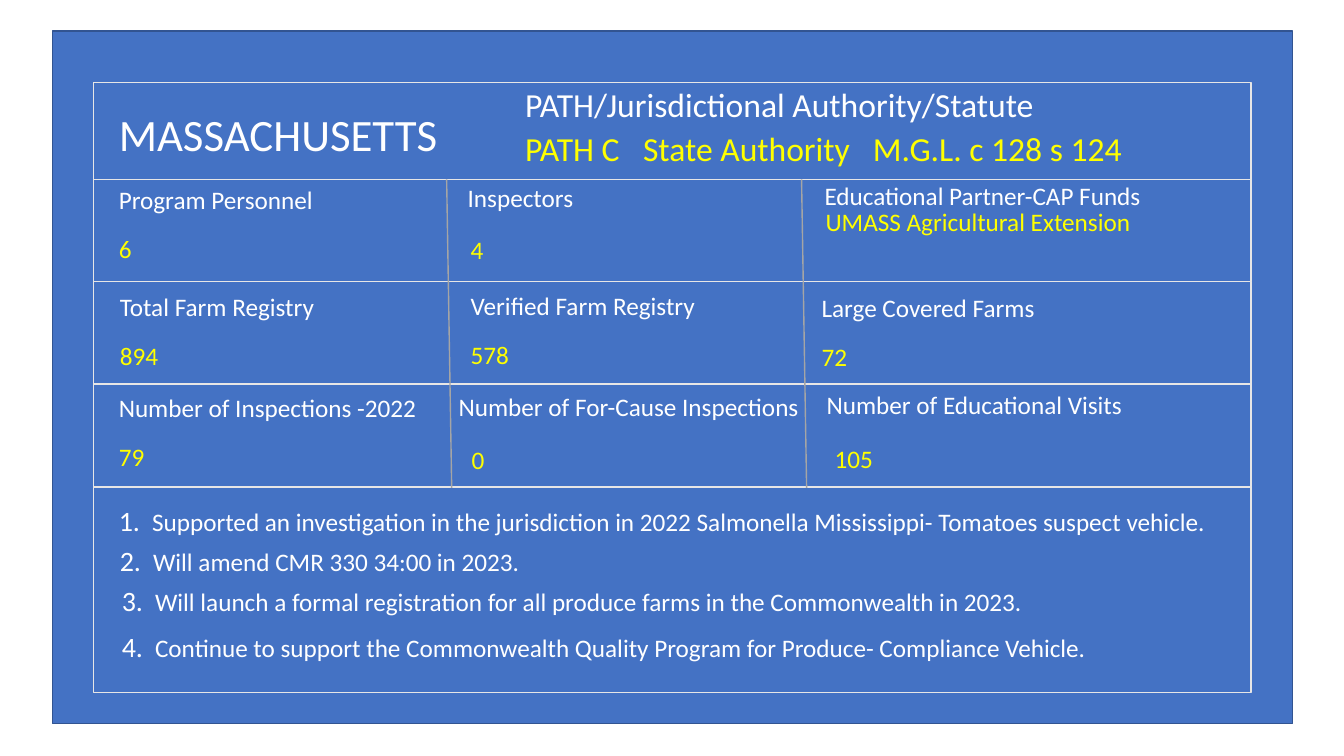
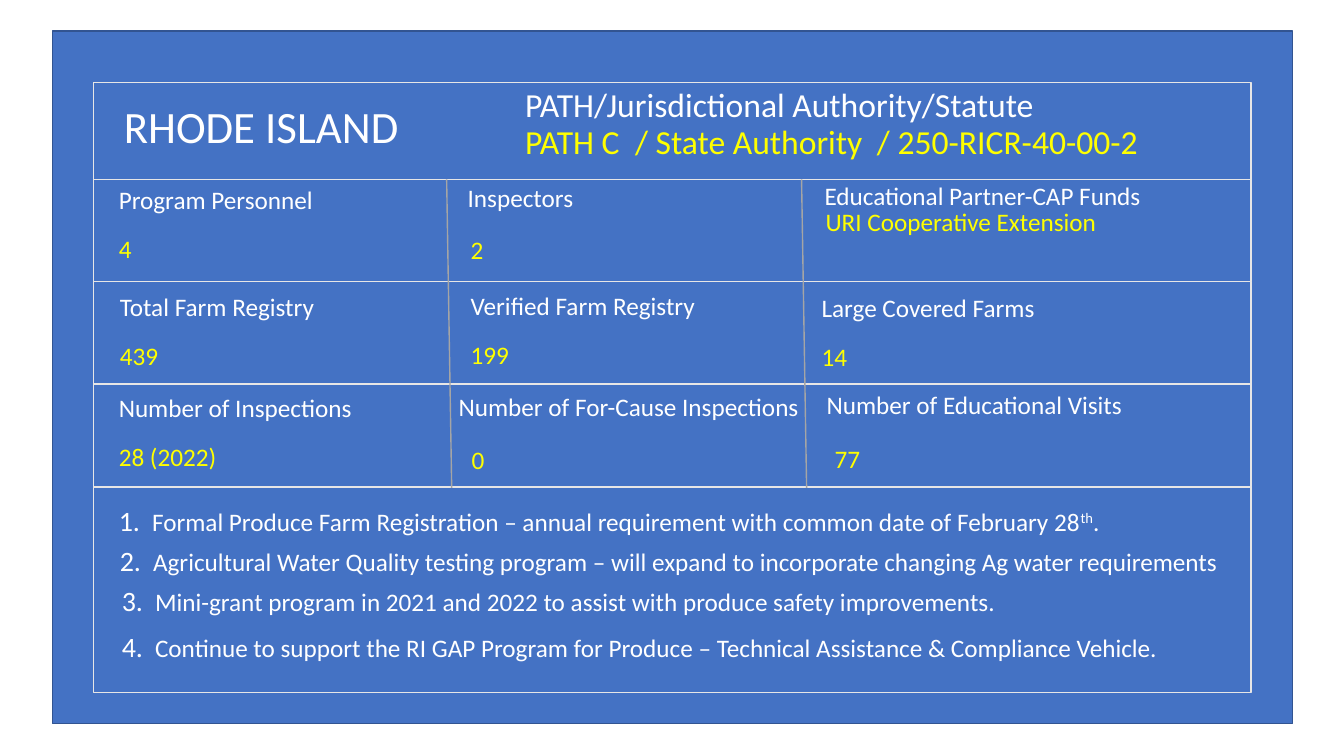
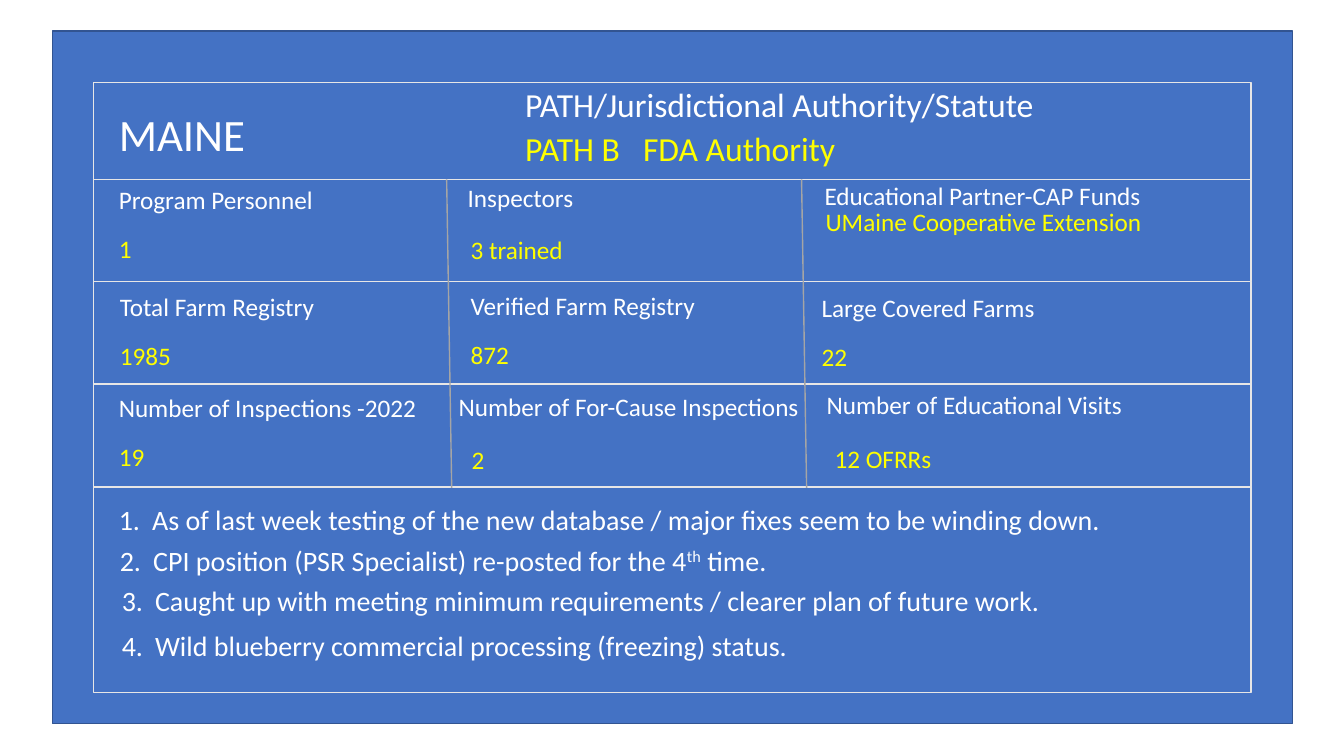
from pptx import Presentation
from pptx.dml.color import RGBColor
from pptx.enum.shapes import MSO_CONNECTOR, MSO_SHAPE
from pptx.enum.text import MSO_ANCHOR, MSO_AUTO_SIZE
from pptx.oxml.ns import qn
from pptx.util import Inches, Pt
from lxml.etree import SubElement

BLUE = RGBColor(0x44, 0x72, 0xC4)
NAVY = RGBColor(0x32, 0x54, 0x91)
PALE = RGBColor(0xE7, 0xE6, 0xE6)
GRAY = RGBColor(0xA5, 0xA5, 0xA5)
WHITE = RGBColor(0xFF, 0xFF, 0xFF)
YELLOW = RGBColor(0xFF, 0xFF, 0x00)
FONT = "Calibri"

PANEL = (0.52, 0.31, 12.3, 6.87)
BAND_LEFT, BAND_WIDTH = 0.93, 11.48
BANDS = [(0.82, 1.02), (1.78, 1.02), (2.79, 1.02), (3.81, 1.02), (4.83, 2.04)]
DIVIDERS = [(4.43, 4.48), (7.95, 8.0)]
DIVIDER_TOP, DIVIDER_BOTTOM = 1.78, 4.84
STATUTE_HEADING = "PATH/Jurisdictional Authority/Statute"
CELL_WIDTH, CELL_HEIGHT = 4.67, 0.42
NOTE_PLACES = [(1.08, 4.93), (1.09, 5.33), (1.11, 5.73), (1.11, 6.18)]
NOTE_INDENT, NUMBER_SIZE = 0.33, 20

CELLS = [
    ("Program Personnel", (1.08, 1.78), (1.08, 2.27)),
    ("Inspectors", (4.54, 1.76), (4.57, 2.28)),
    ("Educational Partner-CAP Funds", (8.08, 1.74), (8.09, 2.0)),
    ("Total Farm Registry", (1.09, 2.84), (1.09, 3.33)),
    ("Verified Farm Registry", (4.57, 2.83), (4.57, 3.32)),
    ("Large Covered Farms", (8.05, 2.85), (8.05, 3.34)),
    ("Number of Inspections", (1.08, 3.84), (1.08, 4.33)),
    ("Number of For-Cause Inspections", (4.45, 3.83), (4.58, 4.36)),
    ("Number of Educational Visits", (8.1, 3.81), (8.18, 4.35)),
]

STATES = [
    {
        "name": "MASSACHUSETTS", "name_at": (1.08, 1.01),
        "statute": "PATH C\tState Authority\tM.G.L. c 128 s 124",
        "statute_top": 1.22, "tabs": (1.17, 3.45),
        "values": ["6", "4", "UMASS Agricultural Extension", "894", "578", "72", "79", "0", "105"],
        "inspections_suffix": " -2022", "note_size": 18,
        "notes": [
            "Supported an investigation in the jurisdiction in 2022 Salmonella Mississippi- Tomatoes suspect vehicle.",
            "Will amend CMR 330 34:00 in 2023.",
            "Will launch a formal registration for all produce farms in the Commonwealth in 2023.",
            "Continue to support the Commonwealth Quality Program for Produce- Compliance Vehicle.",
        ],
    },
    {
        "name": "RHODE ISLAND", "name_at": (1.13, 0.93),
        "statute": "PATH C\t/ State Authority\t/ 250-RICR-40-00-2",
        "statute_top": 1.15, "tabs": (1.09, 3.49),
        "values": ["4", "2", "URI Cooperative Extension", "439", "199", "14", "28 (2022)", "0", "77"],
        "inspections_suffix": "", "note_size": 18,
        "notes": [
            "Formal Produce Farm Registration – annual requirement with common date of February 28^th^.",
            "Agricultural Water Quality testing program – will expand to incorporate changing Ag water requirements",
            "Mini-grant program in 2021 and 2022 to assist with produce safety improvements.",
            "Continue to support the RI GAP Program for Produce – Technical Assistance & Compliance Vehicle.",
        ],
    },
    {
        "name": "MAINE", "name_at": (1.08, 1.01),
        "statute": "PATH B\tFDA Authority",
        "statute_top": 1.22, "tabs": (1.17,),
        "values": ["1", "3 trained", "UMaine Cooperative Extension", "1985", "872", "22", "19", "2", "12 OFRRs"],
        "inspections_suffix": " -2022", "note_size": 20,
        "notes": [
            "As of last week testing of the new database / major fixes seem to be winding down.",
            "CPI position (PSR Specialist) re-posted for the 4^th^ time.",
            "Caught up with meeting minimum requirements / clearer plan of future work.",
            "Wild blueberry commercial processing (freezing) status.",
        ],
    },
]


def add_text(page, text, place, width=CELL_WIDTH, height=CELL_HEIGHT, size=18,
             color=WHITE, anchor=MSO_ANCHOR.TOP, number=None, tabs=()):
    box = page.shapes.add_textbox(*map(Inches, (*place, width, height)))
    frame = box.text_frame
    frame.word_wrap = True
    frame.auto_size = MSO_AUTO_SIZE.NONE
    frame.vertical_anchor = anchor
    para = frame.paragraphs[0]
    for index, part in enumerate(text.split("^")):
        span = para.add_run()
        span.text = part
        span.font.name, span.font.size = FONT, Pt(size)
        span.font.color.rgb = color
        if index % 2:
            span.font._element.set("baseline", "30000")
    properties = para._p.get_or_add_pPr()
    if number:
        indent = Inches(NOTE_INDENT)
        properties.set("marL", str(indent))
        properties.set("indent", str(-indent))
        SubElement(properties, qn("a:buSzPct"), val=str(round(NUMBER_SIZE / size * 100) * 1000))
        SubElement(properties, qn("a:buFont"), typeface=FONT)
        SubElement(properties, qn("a:buAutoNum"), type="arabicPeriod", startAt=str(number))
    if tabs:
        stops = SubElement(properties, qn("a:tabLst"))
        for position in tabs:
            SubElement(stops, qn("a:tab"), pos=str(Inches(position)), algn="l")


def add_band(page, bounds, line_color):
    band = page.shapes.add_shape(MSO_SHAPE.RECTANGLE, *map(Inches, bounds))
    band.shadow.inherit = False
    band.fill.solid()
    band.fill.fore_color.rgb = BLUE
    band.line.color.rgb = line_color
    band.line.width = Pt(1)


def add_divider(page, top_x, bottom_x):
    ends = (top_x, DIVIDER_TOP, bottom_x, DIVIDER_BOTTOM)
    divider = page.shapes.add_connector(MSO_CONNECTOR.STRAIGHT, *map(Inches, ends))
    divider.line.color.rgb = GRAY
    divider.line.width = Pt(1)
    SubElement(divider._element.spPr, qn("a:effectLst"))


def add_state(deck, state):
    page = deck.slides.add_slide(deck.slide_layouts[6])
    add_band(page, PANEL, NAVY)
    for top, height in BANDS:
        add_band(page, (BAND_LEFT, top, BAND_WIDTH, height), PALE)
    for divider in DIVIDERS:
        add_divider(page, *divider)

    add_text(page, state["name"], state["name_at"], width=4.87, height=0.64, size=32)
    add_text(page, STATUTE_HEADING, (5.11, 0.78), width=6.82, height=0.5, size=24)
    add_text(page, state["statute"], (5.11, state["statute_top"]), width=7.13, height=0.5,
             size=24, color=YELLOW, tabs=state["tabs"])

    for (label, label_at, value_at), value in zip(CELLS, state["values"]):
        if label == "Number of Inspections":
            label += state["inspections_suffix"]
        add_text(page, label, label_at)
        add_text(page, value, value_at, color=YELLOW)

    for number, (note, place) in enumerate(zip(state["notes"], NOTE_PLACES), 1):
        add_text(page, note, place, width=11.2, height=0.44, size=state["note_size"],
                 anchor=MSO_ANCHOR.BOTTOM, number=number)


def main():
    deck = Presentation()
    deck.slide_width, deck.slide_height = Inches(13.33), Inches(7.5)
    for state in STATES:
        add_state(deck, state)
    deck.save("out.pptx")


if __name__ == "__main__":
    main()
